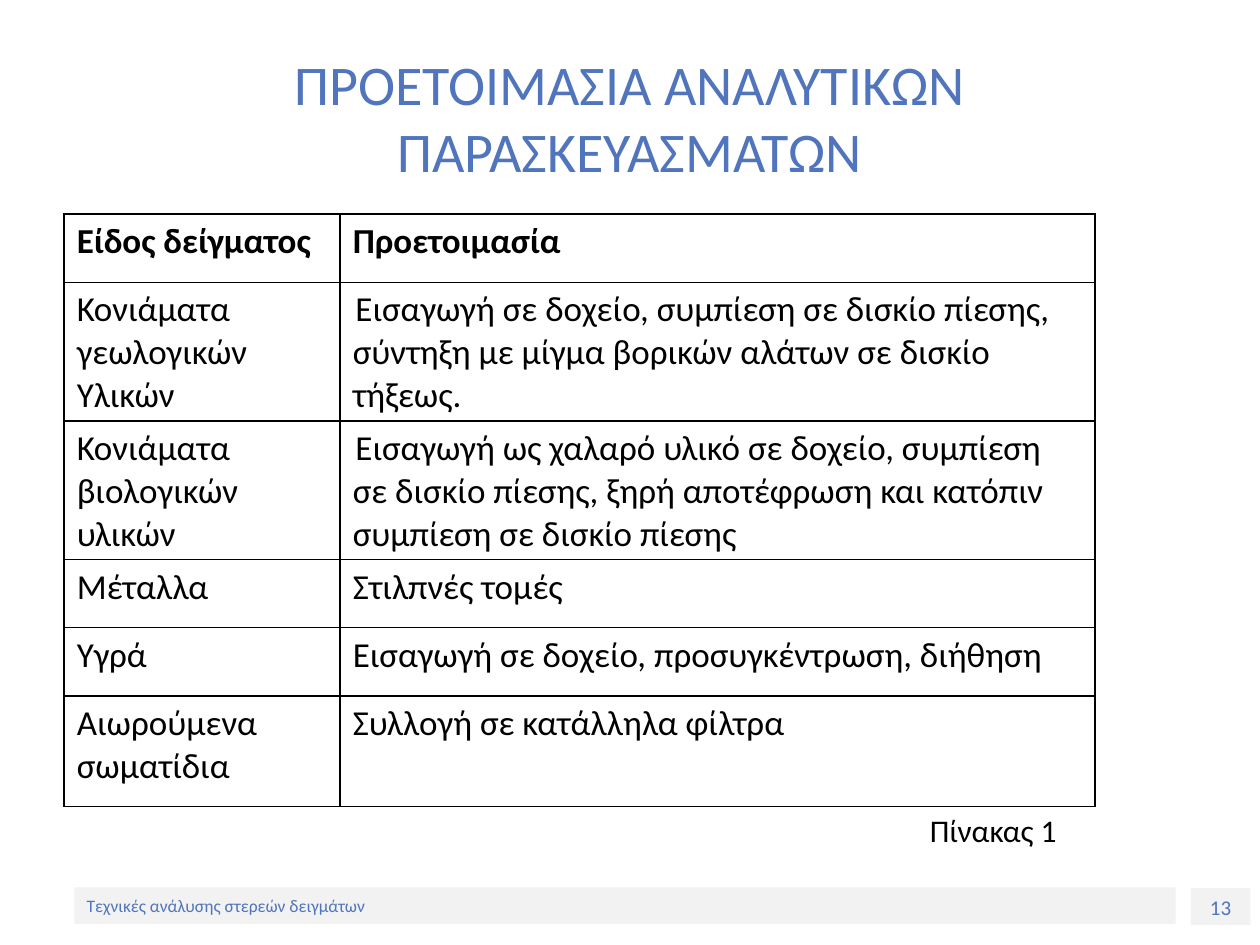
from lxml import etree
from pptx import Presentation
from pptx import util as u
from pptx.dml.color import RGBColor
from pptx.enum import shapes, text
from pptx.oxml import ns

BLUE = RGBColor(0x50, 0x75, 0xBC)
BLACK = RGBColor(0, 0, 0)
PALE = RGBColor(0xF2, 0xF2, 0xF2)
FONT = "Calibri"
HANGING = (27, -27)
FIRST_LINE = (0, 1.5)
COLUMNS = (157.7, 431.3)
HEIGHTS = (38.9, 63.4, 68.4, 38.9, 38.9, 63.4)
ROWS = [
    ("Είδος δείγματος", "Προετοιμασία"),
    ("Κονιάματα\nγεωλογικών\nΥλικών",
     "Εισαγωγή σε δοχείο, συμπίεση σε δισκίο πίεσης, σύντηξη με μίγμα "
     "βορικών αλάτων σε δισκίο τήξεως."),
    ("Κονιάματα\nβιολογικών\nυλικών",
     "Εισαγωγή ως χαλαρό υλικό σε δοχείο, συμπίεση σε δισκίο πίεσης, ξηρή "
     "αποτέφρωση και κατόπιν συμπίεση σε δισκίο πίεσης"),
    ("Μέταλλα", "Στιλπνές τομές"),
    ("Υγρά", "Εισαγωγή σε δοχείο, προσυγκέντρωση, διήθηση"),
    ("Αιωρούμενα\nσωματίδια", "Συλλογή σε κατάλληλα φίλτρα"),
]


def write(frame, words, size, color, align=text.PP_ALIGN.LEFT, bold=False):
    """Fill a text frame and format its runs."""
    frame.text = words
    frame.word_wrap = True
    for para in frame.paragraphs:
        para.alignment = align
        for span in para.runs:
            span.font.name = FONT
            span.font.size = u.Pt(size)
            span.font.bold = bold
            span.font.color.rgb = color


def add_label(page, box, words, size, color, align=text.PP_ALIGN.LEFT):
    """Add a vertically centred text box."""
    label = page.shapes.add_textbox(*map(u.Pt, box))
    write(label.text_frame, words, size, color, align)
    label.text_frame.vertical_anchor = text.MSO_ANCHOR.MIDDLE


def add_band(page, box, words, size, align, anchor):
    """Add a pale footer rectangle with blue text."""
    band = page.shapes.add_shape(shapes.MSO_SHAPE.RECTANGLE, *map(u.Pt, box))
    band.shadow.inherit = False
    band.fill.solid()
    band.fill.fore_color.rgb = PALE
    band.line.fill.background()
    write(band.text_frame, words, size, BLUE, align)
    band.text_frame.vertical_anchor = anchor


def add_footer(page, left, top):
    """Place the course name and the page number at the foot."""
    add_band(page, (left, top, 629.3, 21), "Τεχνικές ανάλυσης στερεών δειγμάτων",
             10, text.PP_ALIGN.LEFT, text.MSO_ANCHOR.MIDDLE)
    add_band(page, (left + 638, top + 0.5, 34, 21), "13",
             12, text.PP_ALIGN.CENTER, text.MSO_ANCHOR.TOP)


def set_borders(cell):
    """Draw a thin black line on all four sides of a cell."""
    properties = cell._tc.get_or_add_tcPr()
    for side in ("lnL", "lnR", "lnT", "lnB"):
        line = etree.SubElement(properties, ns.qn(f"a:{side}"), w=str(u.Pt(1)))
        fill = etree.SubElement(line, ns.qn("a:solidFill"))
        etree.SubElement(fill, ns.qn("a:srgbClr"), val=str(BLACK))


def set_indent(para, margin, indent):
    """Set the left margin and first-line indent of a paragraph."""
    properties = para._p.get_or_add_pPr()
    properties.set("marL", str(u.Pt(margin)))
    properties.set("indent", str(u.Pt(indent)))


def add_samples_table(page, left, top):
    """Place the table of sample kinds and their preparation."""
    table = page.shapes.add_table(
        len(ROWS), len(COLUMNS), u.Pt(left), u.Pt(top),
        u.Pt(sum(COLUMNS)), u.Pt(sum(HEIGHTS))).table
    table.first_row = table.horz_banding = False
    for column, width in zip(table.columns, COLUMNS):
        column.width = u.Pt(width)
    for row, height, entries in zip(table.rows, HEIGHTS, ROWS):
        row.height = u.Pt(height)
        header = entries is ROWS[0]
        for index, (cell, words) in enumerate(zip(row.cells, entries)):
            justified = header or index == 0
            align = text.PP_ALIGN.JUSTIFY if justified else text.PP_ALIGN.LEFT
            write(cell.text_frame, words, 20, BLACK, align, header)
            wraps = index == 1 and len(words) > 50
            for para in cell.text_frame.paragraphs:
                set_indent(para, *(FIRST_LINE if wraps else HANGING))
            set_borders(cell)
            cell.fill.background()


def main():
    """Build and save the slide."""
    deck = Presentation()
    deck.slide_width, deck.slide_height = u.Pt(720), u.Pt(540)
    page = deck.slides.add_slide(deck.slide_layouts[6])
    add_footer(page, 42.5, 507)
    add_label(page, (36, 21.6, 648, 90), "ΠΡΟΕΤΟΙΜΑΣΙΑ ΑΝΑΛΥΤΙΚΩΝ ΠΑΡΑΣΚΕΥΑΣΜΑΤΩΝ",
              32, BLUE, text.PP_ALIGN.CENTER)
    add_samples_table(page, 36.7, 122.4)
    add_label(page, (524.2, 457.2, 118.8, 33.8), "Πίνακας 1", 18, BLACK)
    deck.save("out.pptx")


if __name__ == "__main__":
    main()
